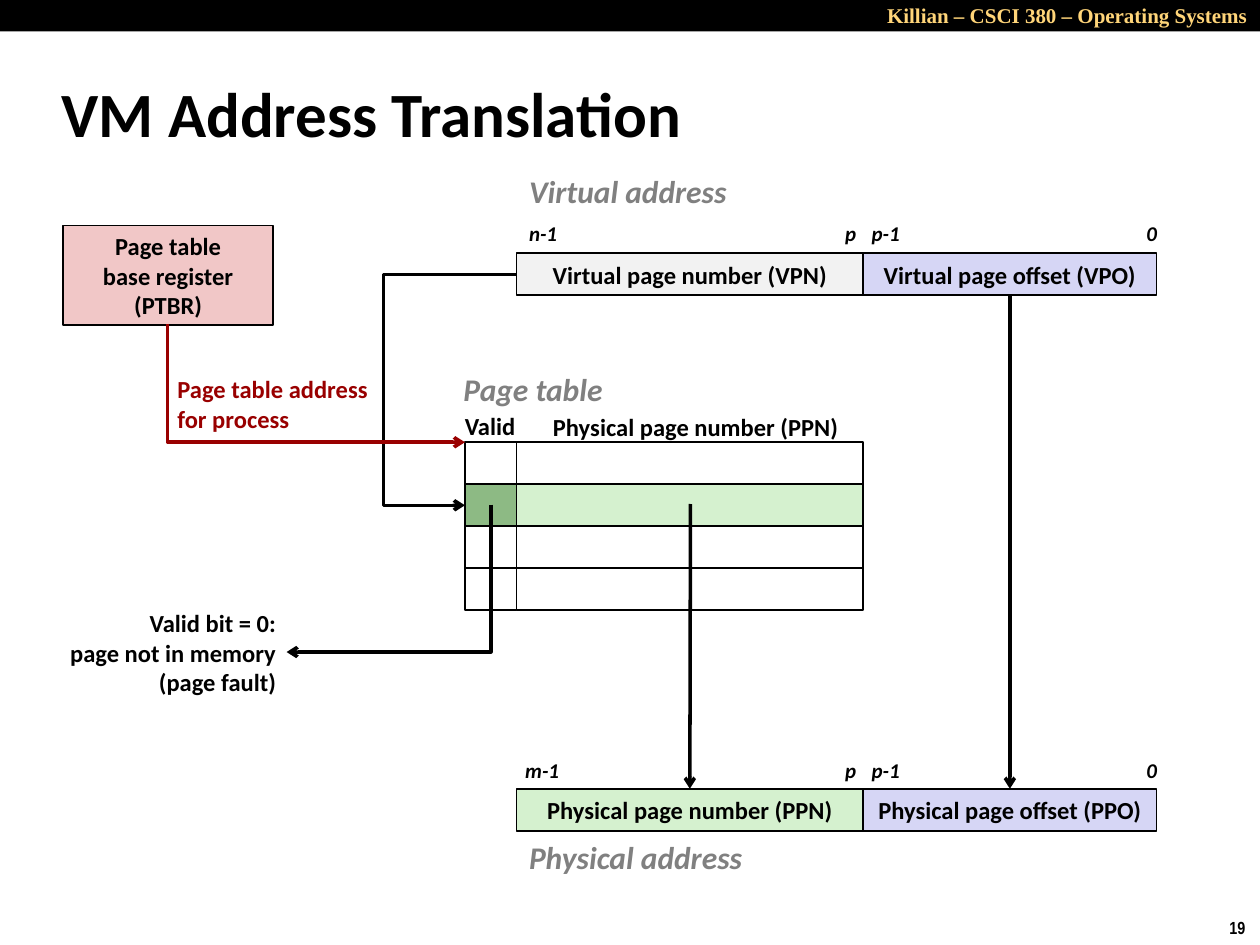
from pptx import Presentation
from pptx.dml.color import RGBColor
from pptx.enum.shapes import MSO_CONNECTOR, MSO_SHAPE
from pptx.enum.text import MSO_ANCHOR, MSO_AUTO_SIZE, PP_ALIGN
from pptx.oxml.ns import qn
from pptx.util import Inches, Pt
from lxml.etree import SubElement


class Theme:
    black, gray, red = "000000", "808080", "990000"
    gold, pink, pale = "FFD579", "F1C7C7", "F2F2F2"
    lilac, mint, green = "D6D6F5", "D5F1CF", "8DBA84"
    title, head, body, small, page = 36, 18, 14, 12, 10
    font, serif, narrow = "Calibri", "Times New Roman", "Arial Narrow"


def write(shape, text, size=Theme.body, color=Theme.black, align=PP_ALIGN.LEFT,
          font=Theme.font, italic=False):
    shape.text_frame.text = text
    for para in shape.text_frame.paragraphs:
        para.alignment = align
        para.font.name, para.font.size = font, Pt(size)
        para.font.bold, para.font.italic = True, italic
        para.font.color.rgb = RGBColor.from_string(color)


def add_box(x, y, w, h, fill=None, text="", line=Theme.black):
    box = shapes.add_shape(MSO_SHAPE.RECTANGLE, Inches(x), Inches(y), Inches(w), Inches(h))
    box.shadow.inherit = False
    if fill:
        box.fill.solid()
        box.fill.fore_color.rgb = RGBColor.from_string(fill)
    else:
        box.fill.background()
    box.line.color.rgb = RGBColor.from_string(line)
    box.line.width = Pt(1)
    if text:
        box.text_frame.vertical_anchor = MSO_ANCHOR.MIDDLE
        write(box, text, align=PP_ALIGN.CENTER)
    return box


deck = Presentation()
deck.slide_width, deck.slide_height = Inches(10), Inches(7.5)
slide = deck.slides.add_slide(deck.slide_layouts[5])
shapes = slide.shapes

# Header bar and title
bar = add_box(0, 0, 10, 0.25, Theme.black)
bar.line.fill.background()
title = shapes.title
title.left, title.top = Inches(0.39), Inches(0.48)
title.width, title.height = Inches(8.3), Inches(0.83)
title.text_frame.vertical_anchor = MSO_ANCHOR.MIDDLE
title.text_frame.auto_size = MSO_AUTO_SIZE.NONE
write(title, "VM Address Translation", Theme.title)

# Virtual and physical addresses
left, split, wide, off, high = 4.1, 6.85, 2.75, 2.33, 1 / 3
vpn = add_box(left, 2.01, wide, high, Theme.pale, "Virtual page number (VPN)")
vpo = add_box(split, 2.01, off, high, Theme.lilac, "Virtual page offset (VPO)")
ppn = add_box(left, 6.26, wide, high, Theme.mint, "Physical page number (PPN)")
ppo = add_box(split, 6.26, off, high, Theme.lilac, "Physical page offset (PPO)")

# Page table: one valid cell and one number cell per row
cells = []
for row in range(4):
    y = 3.51 + row * high
    hit = row == 1
    add_box(left, y, wide, high, Theme.mint if hit else None)
    cells.append(add_box(3.69, y, 0.41, high, Theme.green if hit else None))

# Base register
add_box(0.5, 1.79, 1.67, 0.79, Theme.pink, "Page table\vbase register\n(PTBR)")

# Arrows: kind, start, end, colour
straight, elbow = MSO_CONNECTOR.STRAIGHT, MSO_CONNECTOR.ELBOW
wires = []
for kind, x1, y1, x2, y2, color in [
    (elbow, 4.1, 2.18, 3.69, 4.01, Theme.black),
    (straight, 8.02, 2.34, 8.02, 6.26, Theme.black),
    (straight, 5.48, 4, 5.48, 6.26, Theme.black),
    (elbow, 2.5, 3.78, 3.67, 5.4, Theme.black),
    (elbow, 2.98, 1.86, 2.04, 4.22, Theme.red),
]:
    wire = shapes.add_connector(kind, Inches(x1), Inches(y1), Inches(x2), Inches(y2))
    wire.line.color.rgb = RGBColor.from_string(color)
    wire.line.width = Pt(2)
    SubElement(wire.line._get_or_add_ln(), qn("a:tailEnd"), type="arrow")
    SubElement(wire._element.spPr, qn("a:effectLst"))
    wires.append(wire)
lookup, offset, number, fault, base = wires

lookup.begin_connect(vpn, 1)
lookup.end_connect(cells[1], 1)
offset.begin_connect(vpo, 2)
offset.end_connect(ppo, 0)
number.end_connect(ppn, 0)

# The lookup elbow swings out to the left of both ends
guides = lookup._element.spPr.find(qn("a:prstGeom")).get_or_add_avLst()
SubElement(guides, qn("a:gd"), name="adj1", fmla="val 258000")

# Single-corner elbows are turned on their centre
for wire, turn in (fault, 90), (base, 270):
    wire._element.spPr.find(qn("a:prstGeom")).set("prst", "bentConnector2")
    wire._element.spPr.find(qn("a:xfrm")).set("rot", str(turn * 60000))

# Labels: x, y, width, height, text, style
head = dict(size=Theme.head, color=Theme.gray, italic=True)
bit = dict(size=Theme.small, italic=True)
right = dict(align=PP_ALIGN.RIGHT)
labels = [
    (6.58, -0.03, 3.42, 0.3, "Killian – CSCI 380 – Operating Systems",
     dict(size=Theme.small, color=Theme.gold, font=Theme.serif, **right)),
    (9.66, 7.23, 0.34, 0.27, "19", dict(size=Theme.page, font=Theme.narrow)),
    (4.1, 1.32, 1.78, 0.4, "Virtual address", head),
    (4.1, 6.6, 1.91, 0.4, "Physical address", head),
    (3.58, 2.89, 1.42, 0.4, "Page table", head),
    (3.59, 3.21, 0.61, 0.34, "Valid", {}),
    (4.29, 3.22, 2.48, 0.34, "Physical page number (PPN)", {}),
    (1.31, 2.92, 1.73, 0.57, "Page table address\nfor process", dict(color=Theme.red)),
    (0.45, 4.78, 1.84, 0.81, "Valid bit = 0:\npage not in memory\n(page fault)", right),
]
for y, top, x in (1.7, "n-1", 4.1), (5.96, "m-1", 4.07):
    labels += [(x, y, 0.49, 0.3, top, bit), (6.61, y, 0.33, 0.3, "p", bit),
               (6.82, y, 0.47, 0.3, "p-1", bit), (9, y, 0.33, 0.3, "0", bit)]
for x, y, w, h, text, style in labels:
    label = shapes.add_textbox(Inches(x), Inches(y), Inches(w), Inches(h))
    label.text_frame.word_wrap = False
    label.text_frame.auto_size = MSO_AUTO_SIZE.SHAPE_TO_FIT_TEXT
    write(label, text, **style)

deck.save("out.pptx")
